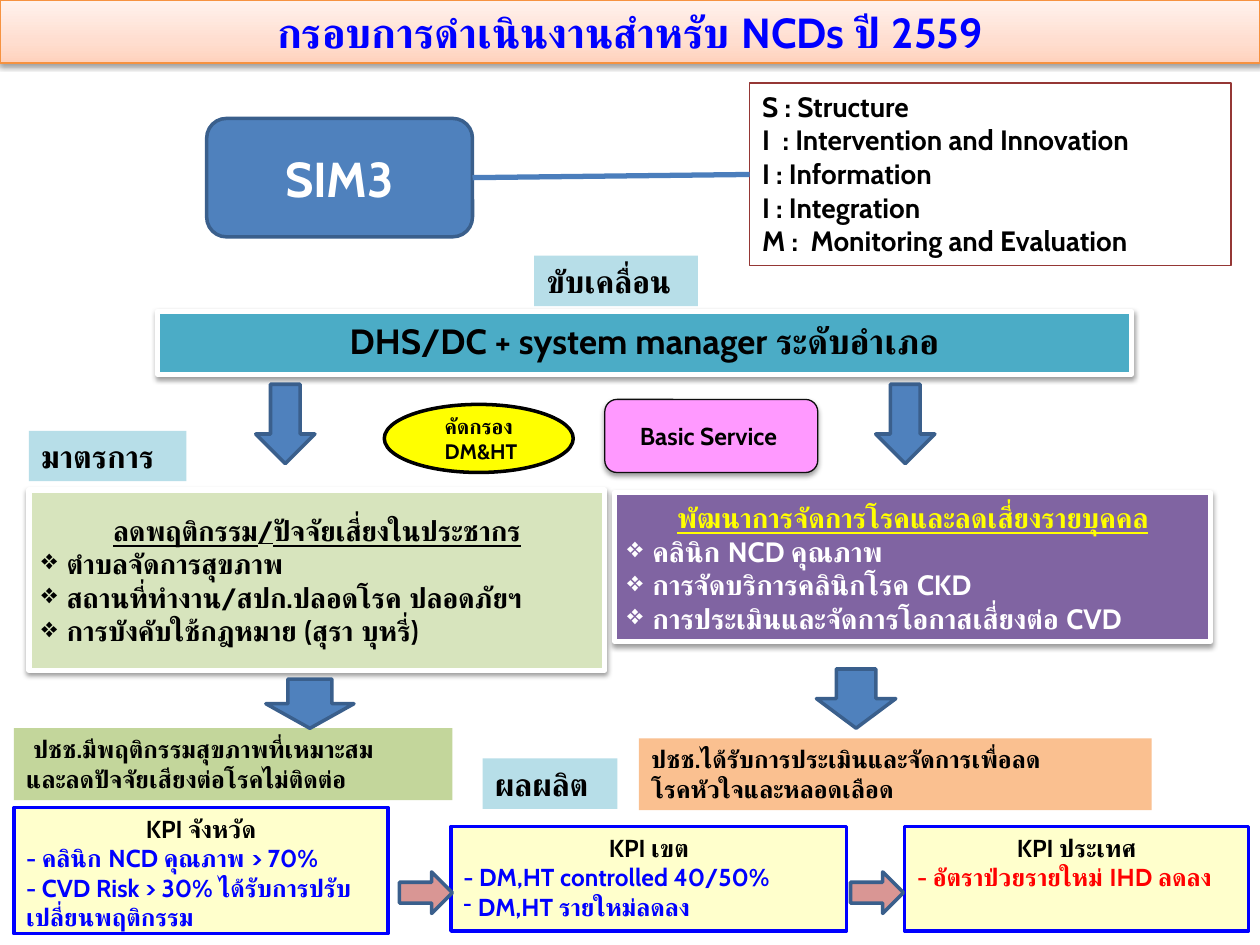
from copy import deepcopy
from lxml.etree import SubElement
from pptx import Presentation
from pptx.dml.color import RGBColor
from pptx.enum.shapes import MSO_CONNECTOR, MSO_SHAPE
from pptx.enum.text import MSO_ANCHOR, PP_ALIGN
from pptx.oxml.ns import qn
from pptx.util import Inches, Pt

HUES = {
    "black": "000000", "white": "FFFFFF", "blue": "0000FF", "red": "FF0000",
    "yellow": "FFFF00", "cream": "FFFFCC", "pink": "FF99FF", "rose": "D99694",
    "steel": "4F81BD", "navy": "3A5F8C", "link": "4B7EBC", "teal": "4BACC6",
    "sky": "B7DEE8", "pale": "D7E4BD", "green": "C3D69B", "purple": "8064A2",
    "peach": "FAC090", "orange": "F69240", "maroon": "953735", "ink": "0D0D0D",
    "low": "FFD2BD", "mid": "FFDED0", "high": "FFF2ED",
}


def hue(name):
    return RGBColor.from_string(HUES[name])


def write(frame, text, first=False, size=16, color="black", align=PP_ALIGN.LEFT,
          under=False, bullet=None, hang=0.2, space=None, font="Cabin"):
    para = frame.paragraphs[0] if first else frame.add_paragraph()
    para.alignment = align
    if space:
        para.line_spacing = space
    if bullet:
        props = para._p.get_or_add_pPr()
        props.set("marL", str(Inches(hang)))
        props.set("indent", str(-Inches(hang)))
        SubElement(props, qn("a:buChar"), char=bullet)
    run = para.add_run()
    run.text = text
    run.font.name = font
    run.font.size = Pt(size)
    run.font.bold = True
    run.font.underline = under
    run.font.color.rgb = hue(color)


class Deck:
    def __init__(self):
        self.show = Presentation()
        self.show.slide_width = Inches(10)
        self.show.slide_height = Inches(7.5)
        self.slide = self.show.slides.add_slide(self.show.slide_layouts[6])

    def shape(self, kind, spot, fill=None, line=None, width=2, shade=False):
        item = self.slide.shapes.add_shape(kind, *map(Inches, spot))
        item.shadow.inherit = False
        if fill:
            item.fill.solid()
            item.fill.fore_color.rgb = hue(fill)
        else:
            item.fill.background()
        if line:
            item.line.color.rgb = hue(line)
            item.line.width = Pt(width)
        else:
            item.line.fill.background()
        if shade:
            self.shade(item)
        return item

    def shade(self, item):
        list_ = item._element.spPr.find(qn("a:effectLst"))
        drop = SubElement(list_, qn("a:outerShdw"), blurRad=str(Pt(3.1)),
                          dist=str(Pt(1.6)), dir="5400000", rotWithShape="0")
        tint = SubElement(drop, qn("a:srgbClr"), val=HUES["black"])
        SubElement(tint, qn("a:alpha"), val="38000")

    def blend(self, item, stops):
        item.fill.gradient()
        item.fill.gradient_angle = 90
        group = item._element.spPr.find(qn("a:gradFill")).find(qn("a:gsLst"))
        group.append(deepcopy(group[-1]))
        for stop, (place, name) in zip(item.fill.gradient_stops, stops):
            stop.position = place
            stop.color.rgb = hue(name)

    def box(self, spot, lines, kind=MSO_SHAPE.RECTANGLE, anchor=MSO_ANCHOR.TOP,
            inset=0.05, look=None, **style):
        item = self.shape(kind, spot, **style)
        frame = item.text_frame
        frame.word_wrap = True
        frame.vertical_anchor = anchor
        frame.margin_left = frame.margin_right = Inches(0.1)
        frame.margin_top = frame.margin_bottom = Inches(inset)
        for spot, (text, extra) in enumerate(lines):
            write(frame, text, first=spot == 0, **{**(look or {}), **extra})
        return item

    def link(self, start, end, color, width):
        line = self.slide.shapes.add_connector(MSO_CONNECTOR.STRAIGHT, 0, 0, 0, 0)
        line.begin_connect(start, 3)
        line.end_connect(end, 1)
        line.line.color.rgb = hue(color)
        line.line.width = Pt(width)
        SubElement(line._element.spPr, qn("a:effectLst"))


def plain(*texts):
    return [(text, {}) for text in texts]


def main():
    deck = Deck()
    mid = MSO_ANCHOR.MIDDLE
    center = {"align": PP_ALIGN.CENTER}
    point = {"bullet": "❖"}
    panel = {"line": "white", "width": 3, "shade": True}

    deck.box((0.23, 3.89, 4.57, 1.43), [
        ("ลดพฤติกรรม/ปัจจัยเสี่ยงในประชากร", {**center, "under": True}),
        ("ตำบลจัดการสุขภาพ", point),
        ("สถานที่ทำงาน/สปก.ปลอดโรค ปลอดภัยฯ", point),
        ("การบังคับใช้กฎหมาย (สุรา บุหรี่)", point),
    ], anchor=mid, inset=0.1, fill="pale", **panel)
    light = {**point, "color": "white"}
    deck.box((4.88, 3.91, 4.73, 1.18), [
        ("พัฒนาการจัดการโรคและลดเสี่ยงรายบุคคล",
         {**center, "under": True, "color": "yellow"}),
        ("คลินิก NCD คุณภาพ", light),
        ("การจัดบริการคลินิกโรค CKD", light),
        ("การประเมินและจัดการโอกาสเสี่ยงต่อ CVD", light),
    ], anchor=MSO_ANCHOR.BOTTOM, fill="purple", **panel)
    deck.box((1.25, 2.47, 7.73, 0.5), plain("DHS/DC + system manager ระดับอำเภอ"),
             anchor=mid, inset=0.1, look={**center, "size": 20, "space": 0.9},
             fill="teal", **panel)

    title = deck.box((0, 0, 10, 0.5), plain("กรอบการดำเนินงานสำหรับ NCDs ปี 2559"),
                     look={**center, "size": 24, "color": "blue"},
                     line="orange", width=0.75, shade=True)
    deck.blend(title, [(0, "low"), (0.35, "mid"), (1, "high")])

    deck.box((4.8, 3.17, 1.69, 0.58), plain("Basic Service "),
             kind=MSO_SHAPE.ROUNDED_RECTANGLE, anchor=mid,
             look={**center, "size": 14}, fill="pink", line="ink", width=0.75,
             shade=True)
    deck.box((3.05, 3.21, 1.5, 0.54), plain("คัดกรอง", " DM&HT"),
             kind=MSO_SHAPE.OVAL, anchor=mid, look={**center, "size": 12},
             fill="yellow", line="black")

    blue = {"color": "blue"}
    goals = [
        ((0.11, 6.41, 2.97, 1), "KPI จังหวัด", [
            ("- คลินิก NCD คุณภาพ > 70%", blue),
            ("- CVD Risk > 30% ได้รับการปรับเปลี่ยนพฤติกรรม", blue)]),
        ((3.58, 6.56, 3.14, 0.83), "KPI เขต", [
            ("- DM,HT controlled 40/50%", blue),
            (" DM,HT รายใหม่ลดลง", {**blue, "bullet": "-", "hang": 0.07})]),
        ((7.18, 6.56, 2.73, 0.83), "KPI ประเทศ", [
            ("- อัตราป่วยรายใหม่ IHD ลดลง", {"color": "red"})]),
    ]
    for spot, head, lines in goals:
        deck.box(spot, [(head, center), *lines], look={"size": 14},
                 fill="cream", line="blue")
    for left in (3.17, 6.75):
        deck.shape(MSO_SHAPE.RIGHT_ARROW, (left, 6.92, 0.42, 0.33), "rose", "navy")

    deck.box((5.07, 5.86, 4.07, 0.57),
             plain("ปชช.ได้รับการประเมินและจัดการเพื่อลด", "โรคหัวใจและหลอดเลือด"),
             look={"size": 14}, fill="peach")
    deck.box((0.11, 5.78, 3.48, 0.57),
             plain(" ปชช.มีพฤติกรรมสุขภาพที่เหมาะสม", "และลดปัจจัยเสียงต่อโรคไม่ติดต่อ"),
             look={"size": 14}, fill="green")
    for left, top, width, text in [(0.23, 3.42, 1.25, "มาตรการ"),
                                   (3.83, 6.02, 1.07, "ผลผลิต"),
                                   (4.24, 2.03, 1.3, "ขับเคลื่อน")]:
        deck.box((left, top, width, 0.4), plain(text), look={"size": 18}, fill="sky")

    for spot in [(2.11, 5.39, 0.7, 0.39), (6.48, 5.31, 0.63, 0.47),
                 (2.03, 3.05, 0.47, 0.63), (6.95, 3.05, 0.47, 0.63)]:
        deck.shape(MSO_SHAPE.DOWN_ARROW, spot, "steel", "navy")

    terms = deck.box((5.95, 0.66, 3.82, 1.45), plain(
        "S : Structure", "I  : Intervention and Innovation", "I : Information",
        "I : Integration", "M :  Monitoring and Evaluation"),
        line="maroon", width=0.75)
    core = deck.box((1.64, 0.94, 2.11, 0.94), plain("SIM3"),
                    kind=MSO_SHAPE.ROUNDED_RECTANGLE, anchor=mid,
                    look={**center, "size": 28, "color": "white"},
                    fill="steel", line="navy")
    deck.link(core, terms, "link", 3)
    deck.show.save("out.pptx")


if __name__ == "__main__":
    main()
